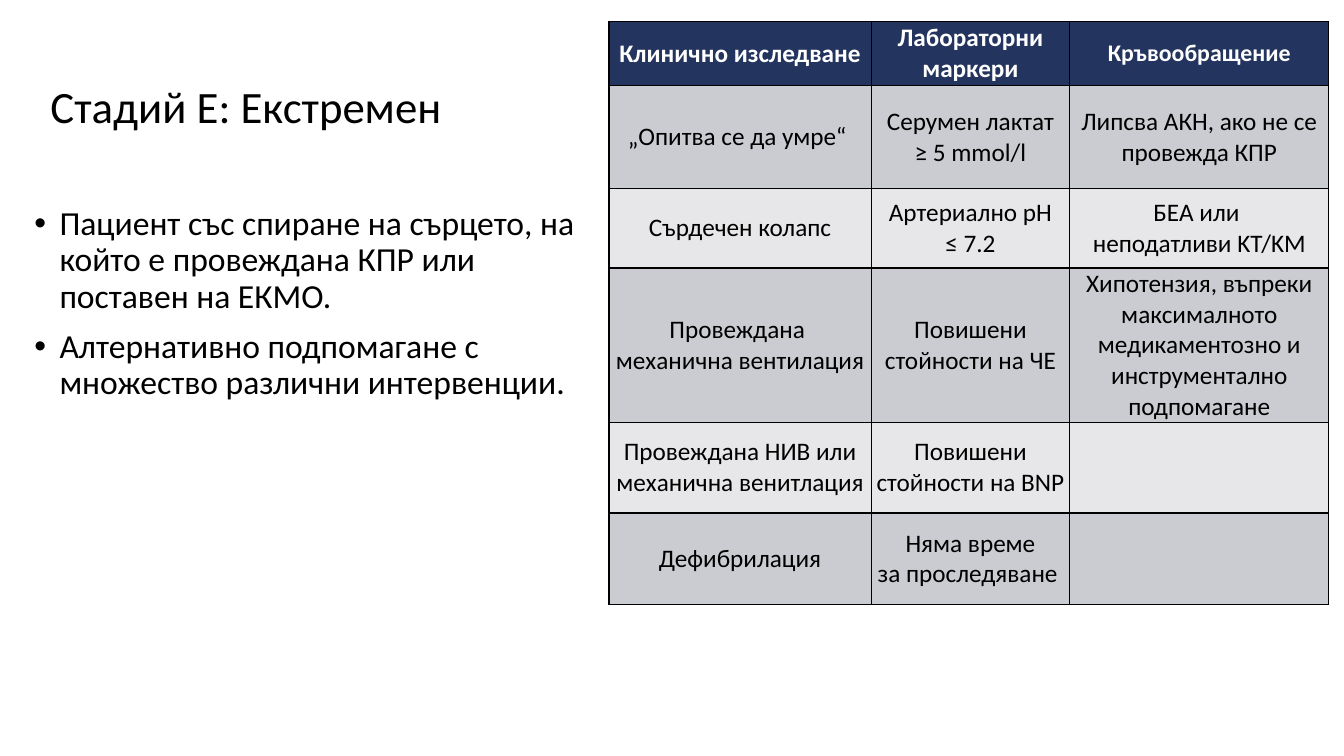
"""Build the slide on stage E: heading, two bullets and a table of signs."""
from lxml.etree import SubElement
from pptx import Presentation
from pptx.dml.color import RGBColor
from pptx.enum.text import MSO_ANCHOR as Anchor, MSO_AUTO_SIZE as AutoSize, PP_ALIGN as Align
from pptx.oxml.ns import qn
from pptx.util import Inches, Pt

HEADING = "Стадий E: Екстремен"
DESCRIPTION = [
    "Пациент със спиране на сърцето, на който е провеждана КПР или поставен на ЕКМО.",
    "Алтернативно подпомагане с множество различни интервенции.",
]
SIGNS = [
    ("Клинично изследване", "Лабораторни маркери", "Кръвообращение"),
    ("„Опитва се да умре“ ", "Серумен лактат\n≥ 5 mmol/l",
     "Липсва АКН, ако не се провежда КПР"),
    ("Сърдечен колапс", "Артериално рН\n≤ 7.2", "БЕА или \nнеподатливи KT/KM"),
    ("Провеждана \nмеханична вентилация", "Повишени стойности на ЧЕ",
     "Хипотензия, въпреки максималното медикаментозно и инструментално подпомагане"),
    ("Провеждана НИВ или\nмеханична венитлация", "Повишени стойности на BNP", ""),
    ("Дефибрилация", "Няма време\nза проследяване ", ""),
]
COLUMN_WIDTHS = (2.6, 1.97, 2.57)
ROW_HEIGHTS = (0.64, 1.02, 0.79, 1.53, 0.9, 0.91)

FONT = "Calibri"
BLACK = RGBColor(0x00, 0x00, 0x00)
WHITE = RGBColor(0xFF, 0xFF, 0xFF)
NAVY = RGBColor(0x23, 0x34, 0x5E)
BANDS = (RGBColor(0xE7, 0xE7, 0xE9), RGBColor(0xCB, 0xCC, 0xD1))


def style(paragraph, size, color, align, bold=False):
    paragraph.alignment = align
    font = paragraph.font
    font.name, font.size, font.bold = FONT, Pt(size), bold
    font.color.rgb = color


def place(holder, left, top, width, height, anchor):
    holder.left, holder.top = Inches(left), Inches(top)
    holder.width, holder.height = Inches(width), Inches(height)
    frame = holder.text_frame
    frame.auto_size, frame.word_wrap = AutoSize.NONE, True
    frame.vertical_anchor = anchor
    frame.margin_left = frame.margin_right = Inches(0.05)
    frame.margin_top = frame.margin_bottom = Inches(0.05)
    return frame


def outline(cell):
    properties = cell._tc.get_or_add_tcPr()
    for position, side in enumerate(("lnL", "lnR", "lnT", "lnB")):
        border = SubElement(properties, qn(f"a:{side}"), w=str(Pt(1)))
        fill = SubElement(border, qn("a:solidFill"))
        SubElement(fill, qn("a:srgbClr"), val=str(BLACK))
        properties.insert(position, border)


def add_heading(slide):
    frame = place(slide.shapes.title, 0.45, 0.36, 11.5, 1.45, Anchor.MIDDLE)
    frame.text = HEADING
    heading = frame.paragraphs[0]
    heading.line_spacing = 0.9
    style(heading, 32, BLACK, Align.LEFT)


def add_description(slide):
    frame = place(slide.placeholders[1], 0.29, 2, 5.67, 3.41, Anchor.TOP)
    frame.text = "\n".join(DESCRIPTION)
    for number, point in enumerate(frame.paragraphs):
        point.line_spacing = 0.9
        point.space_before = Pt(10 if number else 0)
        properties = point._p.get_or_add_pPr()
        properties.set("marL", str(Inches(0.25)))
        properties.set("indent", str(-Inches(0.25)))
        SubElement(properties, qn("a:buFont"), typeface="Arial")
        SubElement(properties, qn("a:buChar"), char="•")
        style(point, 24, BLACK, Align.LEFT)


def add_signs(slide):
    signs = slide.shapes.add_table(
        len(SIGNS), len(COLUMN_WIDTHS), Inches(6.04), Inches(0.21),
        Inches(sum(COLUMN_WIDTHS)), Inches(sum(ROW_HEIGHTS))).table
    for column, width in zip(signs.columns, COLUMN_WIDTHS):
        column.width = Inches(width)
    for r, (row, height, texts) in enumerate(zip(signs.rows, ROW_HEIGHTS, SIGNS)):
        row.height = Inches(height)
        header = r == 0
        for cell, text in zip(row.cells, texts):
            cell.text = text
            cell.vertical_anchor = Anchor.MIDDLE
            cell.margin_left = cell.margin_right = 0
            cell.margin_top = cell.margin_bottom = 0
            cell.fill.solid()
            cell.fill.fore_color.rgb = NAVY if header else BANDS[r % 2]
            outline(cell)
            size = 17 if text == SIGNS[0][-1] else 18
            for line in cell.text_frame.paragraphs:
                style(line, size, WHITE if header else BLACK, Align.CENTER, header)


def main():
    deck = Presentation()
    deck.slide_width, deck.slide_height = Inches(13.33), Inches(7.5)
    slide = deck.slides.add_slide(deck.slide_layouts[1])
    add_heading(slide)
    add_description(slide)
    add_signs(slide)
    deck.save("out.pptx")


if __name__ == "__main__":
    main()
